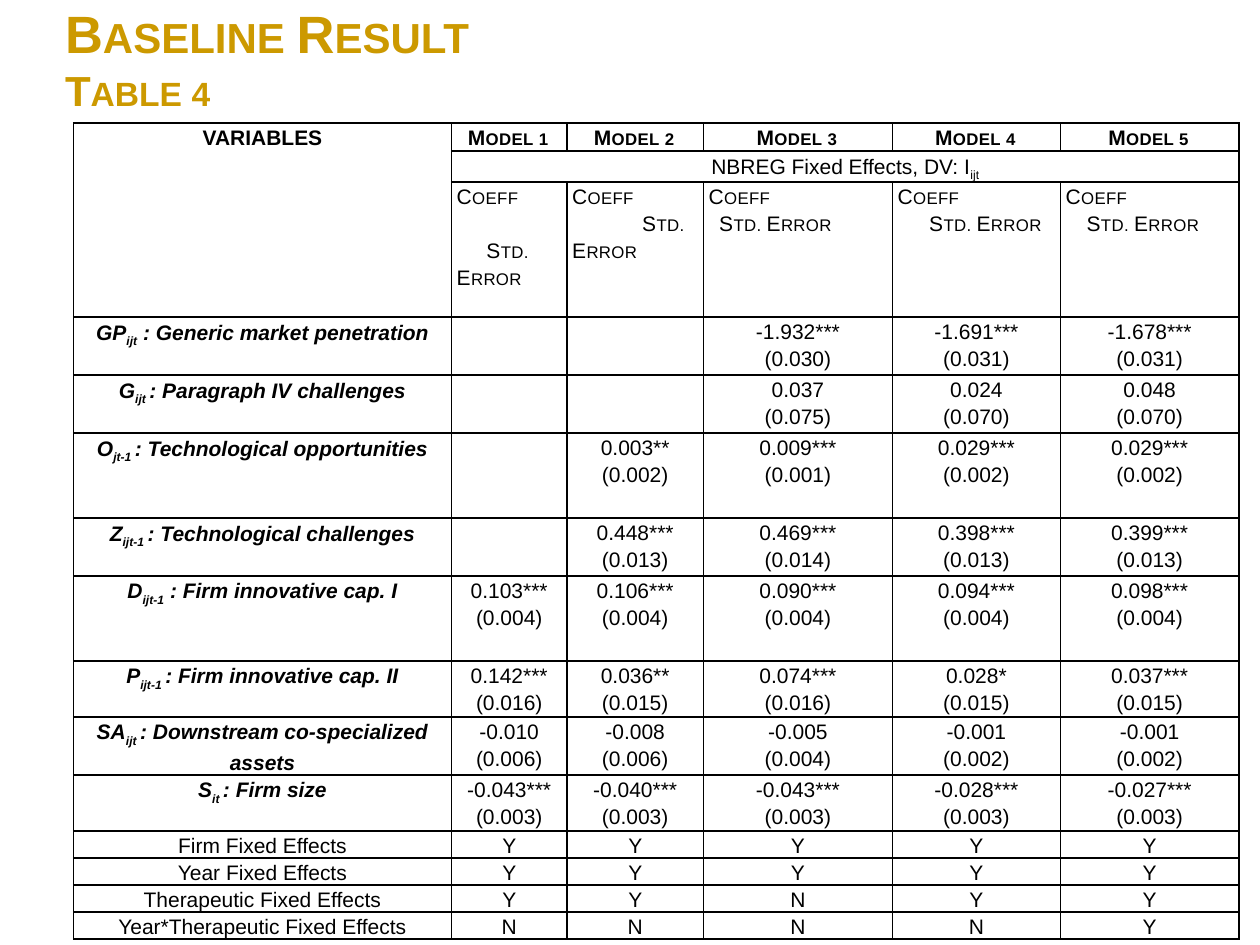
from dataclasses import dataclass

from lxml import etree
from pptx import Presentation
from pptx.dml.color import RGBColor
from pptx.enum import text as t
from pptx.oxml import ns
from pptx.util import Pt


@dataclass(frozen=True)
class Theme:
    font: str = "Arial"
    gold: RGBColor = RGBColor(0xCC, 0x99, 0x00)
    ink: RGBColor = RGBColor(0, 0, 0)
    paper: RGBColor = RGBColor(0xFF, 0xFF, 0xFF)
    title: int = 30
    subtitle: int = 24
    body: int = 12


THEME = Theme()


def write(paragraph, text, size=THEME.body, color=THEME.ink, bold=False, italic=False,
          small_caps=False, tracking=0, subscript=False, align=t.PP_ALIGN.CENTER, spacing=1.15):
    """Append one formatted run to the paragraph."""
    paragraph.alignment = align
    paragraph.line_spacing = spacing
    run = paragraph.add_run()
    run.text = text
    font = run.font
    font.name, font.size, font.bold, font.italic = THEME.font, Pt(size), bold, italic
    font.color.rgb = color
    properties = run._r.get_or_add_rPr()
    if small_caps:
        properties.set("cap", "small")
    if tracking:
        properties.set("spc", str(tracking))
    if subscript:
        properties.set("baseline", "-25000")


def frame_cell(cell):
    """Give a cell its margins, black borders and white fill."""
    cell.margin_left = cell.margin_right = Pt(3)
    cell.margin_top = cell.margin_bottom = 0
    cell.vertical_anchor = t.MSO_ANCHOR.TOP
    properties = cell._tc.get_or_add_tcPr()
    for side in ("lnL", "lnR", "lnT", "lnB"):
        line = etree.SubElement(properties, ns.qn(f"a:{side}"), w=str(Pt(1)))
        fill = etree.SubElement(line, ns.qn("a:solidFill"))
        etree.SubElement(fill, ns.qn("a:srgbClr"), val=str(THEME.ink))
    cell.fill.solid()
    cell.fill.fore_color.rgb = THEME.paper


# Symbol, subscript, description, row height, then (coefficient, error) for the last models
ESTIMATES = [
    ("GP", "ijt", " : Generic market penetration", 33.14,
     [("-1.932***", "0.030"), ("-1.691***", "0.031"), ("-1.678***", "0.031")]),
    ("G", "ijt ", ": Paragraph IV challenges", 33.14,
     [("0.037", "0.075"), ("0.024", "0.070"), ("0.048", "0.070")]),
    ("O", "jt-1 ", ": Technological opportunities", 48.57,
     [("0.003**", "0.002"), ("0.009***", "0.001"), ("0.029***", "0.002"), ("0.029***", "0.002")]),
    ("Z", "ijt-1 ", ": Technological challenges", 33.14,
     [("0.448***", "0.013"), ("0.469***", "0.014"), ("0.398***", "0.013"), ("0.399***", "0.013")]),
    ("D", "ijt-1", " : Firm innovative cap. I", 48.57,
     [("0.103***", "0.004"), ("0.106***", "0.004"), ("0.090***", "0.004"), ("0.094***", "0.004"),
      ("0.098***", "0.004")]),
    ("P", "ijt-1 ", ": Firm innovative cap. II", 32,
     [("0.142***", "0.016"), ("0.036**", "0.015"), ("0.074***", "0.016"), ("0.028*", "0.015"),
      ("0.037***", "0.015")]),
    ("SA", "ijt ", ": Downstream co-specialized assets", 33.14,
     [("-0.010", "0.006"), ("-0.008", "0.006"), ("-0.005", "0.004"), ("-0.001", "0.002"),
      ("-0.001", "0.002")]),
    ("S", "it ", ": Firm size", 32,
     [("-0.043***", "0.003"), ("-0.040***", "0.003"), ("-0.043***", "0.003"),
      ("-0.028***", "0.003"), ("-0.027***", "0.003")]),
]
FIXED_EFFECTS = [
    ("Firm Fixed Effects", "YYYYY"),
    ("Year Fixed Effects", "YYYYY"),
    ("Therapeutic Fixed Effects", "YYNYY"),
    ("Year*Therapeutic Fixed Effects", "NNNNY"),
]
COLUMN_WIDTHS = [216, 66, 78, 108, 96, 102]
ROW_HEIGHTS = [16, 17.71, 77.14] + [row[3] for row in ESTIMATES] + [15.43] * len(FIXED_EFFECTS)
# First-line indent and space before of "Std. Error" under each model
ERROR_OFFSETS = [(17, 15.43), (40, 0), (6, 0), (18, 0), (12, 0)]

deck = Presentation()
deck.slide_width, deck.slide_height = Pt(720), Pt(540)
slide = deck.slides.add_slide(deck.slide_layouts[5])

heading = slide.shapes.title
heading.left, heading.top, heading.width, heading.height = Pt(30), Pt(-12), Pt(708), Pt(90)
heading.text_frame.auto_size = t.MSO_AUTO_SIZE.NONE
heading.text_frame.vertical_anchor = t.MSO_ANCHOR.MIDDLE
heading_line = heading.text_frame.paragraphs[0]
heading_style = dict(color=THEME.gold, bold=True, small_caps=True, align=t.PP_ALIGN.LEFT, spacing=1.0)
write(heading_line, "Baseline Result", size=THEME.title, **heading_style)
heading_line.add_line_break()
write(heading_line, "Table 4", size=THEME.subtitle, **heading_style)

results = slide.shapes.add_table(len(ROW_HEIGHTS), len(COLUMN_WIDTHS), Pt(42), Pt(70.3),
                                 Pt(sum(COLUMN_WIDTHS)), Pt(sum(ROW_HEIGHTS))).table
results.first_row = results.horz_banding = False
for column, width in zip(results.columns, COLUMN_WIDTHS):
    column.width = Pt(width)
for row, height in zip(results.rows, ROW_HEIGHTS):
    row.height = Pt(height)
for cell in results.iter_cells():
    frame_cell(cell)
results.cell(0, 0).merge(results.cell(2, 0))
results.cell(1, 1).merge(results.cell(1, 5))

write(results.cell(0, 0).text_frame.paragraphs[0], "VARIABLES", bold=True)
method = results.cell(1, 1).text_frame.paragraphs[0]
write(method, "NBREG Fixed Effects, DV: I")
write(method, "ijt", subscript=True)

for model, (indent, space) in enumerate(ERROR_OFFSETS, start=1):
    write(results.cell(0, model).text_frame.paragraphs[0], f"Model {model}",
          bold=True, small_caps=True, tracking=20)
    legend = results.cell(2, model).text_frame
    error = legend.add_paragraph()
    for paragraph, label in ((legend.paragraphs[0], "Coeff"), (error, "Std. Error")):
        write(paragraph, label, small_caps=True, tracking=20, align=t.PP_ALIGN.LEFT)
    error.space_before = Pt(space)
    error._p.get_or_add_pPr().set("marL", "0")
    error._p.get_or_add_pPr().set("indent", str(Pt(indent)))

for row, (symbol, index, description, _, values) in enumerate(ESTIMATES, start=3):
    variable = results.cell(row, 0).text_frame.paragraphs[0]
    write(variable, symbol, bold=True, italic=True)
    write(variable, index, bold=True, italic=True, subscript=True)
    write(variable, description, bold=True, italic=True)
    first_model = len(COLUMN_WIDTHS) - len(values)
    for model, (coefficient, deviation) in enumerate(values, start=first_model):
        estimate = results.cell(row, model)
        estimate.fill.background()
        write(estimate.text_frame.paragraphs[0], coefficient)
        write(estimate.text_frame.add_paragraph(), f"({deviation})")

for row, (effect, flags) in enumerate(FIXED_EFFECTS, start=3 + len(ESTIMATES)):
    for column, entry in enumerate([effect, *flags]):
        write(results.cell(row, column).text_frame.paragraphs[0], entry)

deck.save("out.pptx")
